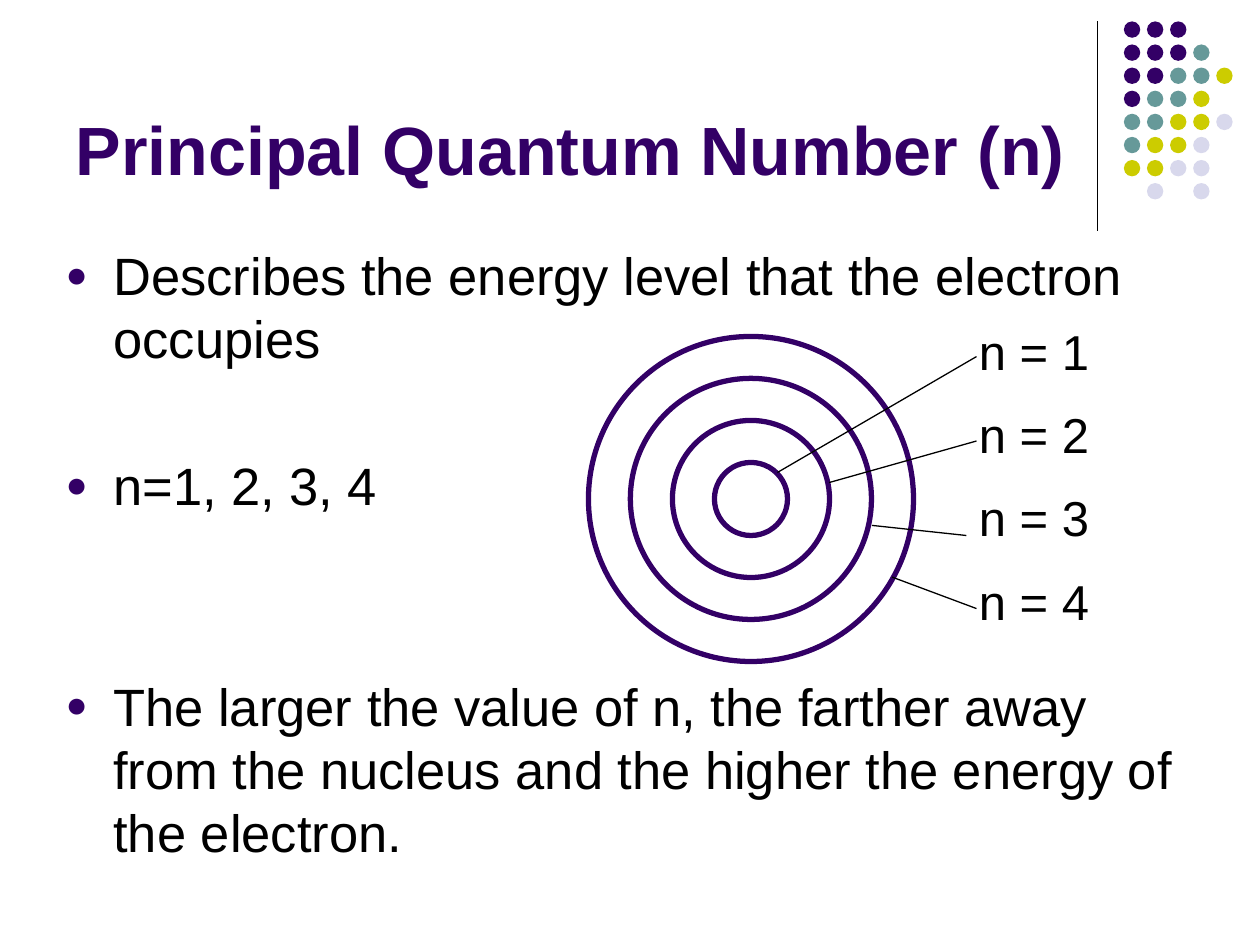
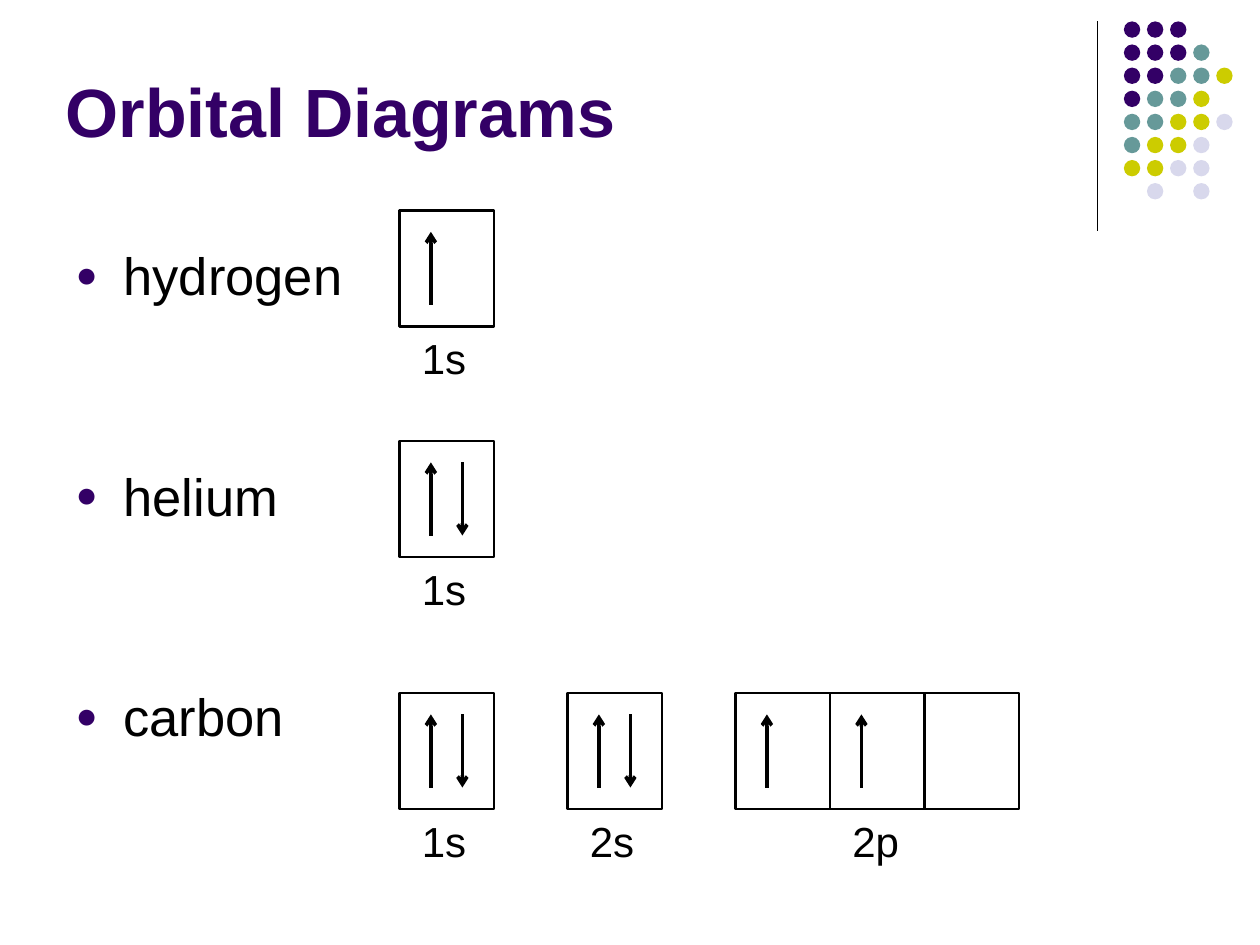
"""Builds two slides on quantum numbers and orbital diagrams."""
from dataclasses import dataclass

from lxml import etree
from pptx import Presentation
from pptx import util as u
from pptx.dml.color import RGBColor
from pptx.enum import shapes, text
from pptx.oxml import ns

ENERGY_TITLE = ("Principal Quantum Number (n)", (0.5, 0.13, 8.25, 1.42))
ENERGY_AREA = (0.42, 1.88, 9.08, 5.37)
ENERGY_POINTS = [
    ("Describes the energy level that the electron occupies", None),
    ("n=1, 2, 3, 4", 48),
    ("The larger the value of n, the farther away from the nucleus "
     "and the higher the energy of the electron.", 90),
]
LEVELS = ["n = 1", "n = 2", "n = 3", "n = 4"]
LEVEL_AREA = (7.67, 2.5, 1.25, 2.67)
LEVEL_LEADERS = [
    ((6.17, 3.75), (7.75, 2.83)),
    ((6.58, 3.83), (7.75, 3.5)),
    ((6.92, 4.17), (7.67, 4.25)),
    ((7.08, 4.58), (7.75, 4.83)),
]
NUCLEUS, INNER_RADIUS, RING_GAP = (5.96, 3.96), 0.29, 1 / 3

ORBITAL_TITLE = ("Orbital Diagrams", (0.42, 0.33, 8.25, 0.92))
ORBITAL_AREA = (0.5, 1.88, 2.58, 4.82)
ELEMENTS = [("hydrogen", None), ("helium", 90), ("carbon", 90)]
ORBITALS = [
    (1.67, [("1s", ["↑"])]),
    (3.5, [("1s", ["↑↓"])]),
    (5.5, [("1s", ["↑↓"]), ("2s", ["↑↓"]), ("2p", ["↑", "↑", ""])]),
]
ORBITAL_LEFT, ORBITAL_STEP = 3.17, 4 / 3
CELL_WIDTH, CELL_HEIGHT, SPIN_GAP = 0.75, 0.92, 0.25

DOT_ROWS = ["PPP", "PPPT", "PPTTY", "PTTY", "TTYYL", "TYYL", "YYLL", " L L"]
DOT_ORIGIN, DOT_STEP, DOT_SIZE = (8.92, 0.17), 0.55 / 3, 0.13


@dataclass(frozen=True)
class Theme:
    """Colours, font and type sizes of the deck."""
    font: str = "Arial"
    purple: str = "330066"
    teal: str = "669999"
    yellow: str = "CCCC00"
    lilac: str = "D8D8EC"
    black: str = "000000"
    title: int = 39
    body: int = 30
    level: int = 28
    orbital: int = 24


THEME = Theme()
DOT_COLOURS = {"P": THEME.purple, "T": THEME.teal, "Y": THEME.yellow, "L": THEME.lilac}


def rgb(colour):
    """Turn a hex string into a colour."""
    return RGBColor.from_string(colour)


def inches(values):
    """Turn numbers into lengths."""
    return [u.Inches(value) for value in values]


def style(para, size, colour=THEME.black, bold=False):
    """Set the font of a whole paragraph."""
    font = para.font
    font.name, font.size, font.bold = THEME.font, u.Pt(size), bold
    font.color.rgb = rgb(colour)


def place(box, area):
    """Move a placeholder to an area."""
    box.left, box.top, box.width, box.height = inches(area)


def add_outline(parent, kind, area, fill=None, line=None, width=1.5):
    """Add a preset shape with a plain fill or a plain line."""
    shape = parent.add_shape(kind, *inches(area))
    shape.shadow.inherit = False
    if fill:
        shape.fill.solid()
        shape.fill.fore_color.rgb = rgb(fill)
    else:
        shape.fill.background()
    if line:
        shape.line.color.rgb = rgb(line)
        shape.line.width = u.Pt(width)
    else:
        shape.line.fill.background()


def add_line(parent, start, end, width=0.75, arrow=False):
    """Add a straight black line, with an arrowhead at its end if asked."""
    line = parent.add_connector(shapes.MSO_CONNECTOR.STRAIGHT, *inches(start + end))
    line.line.color.rgb = rgb(THEME.black)
    line.line.width = u.Pt(width)
    properties = line.element.spPr
    if arrow:
        etree.SubElement(properties.find(ns.qn("a:ln")), ns.qn("a:tailEnd"), type="arrow")
    etree.SubElement(properties, ns.qn("a:effectLst"))


def add_label(slide, area, lines, size):
    """Add a text box with one paragraph for each line."""
    frame = slide.shapes.add_textbox(*inches(area)).text_frame
    frame.word_wrap = True
    frame.text = "\n".join(lines)
    for index, para in enumerate(frame.paragraphs):
        style(para, size)
        if index:
            para.space_before = u.Pt(size / 2)


def add_bullet(para):
    """Give a paragraph a hanging purple bullet."""
    properties = para._p.get_or_add_pPr()
    properties.set("marL", str(u.Inches(0.38)))
    properties.set("indent", str(u.Inches(-0.38)))
    colour = etree.SubElement(properties, ns.qn("a:buClr"))
    etree.SubElement(colour, ns.qn("a:srgbClr"), val=THEME.purple)
    etree.SubElement(properties, ns.qn("a:buSzPct"), val="70000")
    etree.SubElement(properties, ns.qn("a:buFont"), typeface=THEME.font)
    etree.SubElement(properties, ns.qn("a:buChar"), char="●")


def add_page(deck, title, area, points):
    """Add a slide with its title and bulleted list."""
    page = deck.slides.add_slide(deck.slide_layouts[1])
    heading, body = page.placeholders
    place(heading, title[1])
    heading.text_frame.text = title[0]
    heading.text_frame.vertical_anchor = text.MSO_ANCHOR.BOTTOM
    para = heading.text_frame.paragraphs[0]
    para.alignment = text.PP_ALIGN.LEFT
    style(para, THEME.title, THEME.purple, bold=True)

    place(body, area)
    frame = body.text_frame
    frame.auto_size = text.MSO_AUTO_SIZE.NONE
    frame.text = "\n".join(point for point, _ in points)
    for para, (_, gap) in zip(frame.paragraphs, points):
        add_bullet(para)
        style(para, THEME.body)
        if gap:
            para.space_before = u.Pt(gap)
    return page


def decorate_layout(page):
    """Put the rule and the dot pattern on the layout of a page."""
    layout = page.slide_layout
    for box in list(layout.placeholders)[2:]:
        layout.shapes.element.remove(box.element)
    group = page.shapes.add_group_shape()
    add_line(group.shapes, (8.71, 0.17), (8.71, 1.83))
    left, top = DOT_ORIGIN
    for row, dots in enumerate(DOT_ROWS):
        for column, dot in enumerate(dots):
            if dot in DOT_COLOURS:
                area = (left + column * DOT_STEP, top + row * DOT_STEP, DOT_SIZE, DOT_SIZE)
                add_outline(group.shapes, shapes.MSO_SHAPE.OVAL, area, fill=DOT_COLOURS[dot])
    layout.shapes.element.append(group.element)


def draw_levels(page):
    """Draw the energy levels as rings with labels and leaders."""
    x, y = NUCLEUS
    for index in range(len(LEVELS)):
        radius = INNER_RADIUS + index * RING_GAP
        area = (x - radius, y - radius, 2 * radius, 2 * radius)
        add_outline(page.shapes, shapes.MSO_SHAPE.OVAL, area, line=THEME.purple, width=3)
    add_label(page, LEVEL_AREA, LEVELS, THEME.level)
    for start, end in LEVEL_LEADERS:
        add_line(page.shapes, start, end)


def draw_cell(page, left, top, spins):
    """Draw one orbital box with its electron arrows."""
    area = (left, top, CELL_WIDTH, CELL_HEIGHT)
    add_outline(page.shapes, shapes.MSO_SHAPE.RECTANGLE, area, line=THEME.black)
    for index, spin in enumerate(spins, start=1):
        x = left + index * SPIN_GAP
        high, low = (x, top + 0.17), (x, top + 0.75)
        start, end = (low, high) if spin == "↑" else (high, low)
        add_line(page.shapes, start, end, width=2, arrow=True)


def draw_orbitals(page):
    """Draw the orbital boxes of every element."""
    for top, orbitals in ORBITALS:
        for index, (name, cells) in enumerate(orbitals):
            left = ORBITAL_LEFT + index * ORBITAL_STEP
            for column, spins in enumerate(cells):
                draw_cell(page, left + column * CELL_WIDTH, top, spins)
            label_left = left + len(cells) // 2 * CELL_WIDTH + 0.08
            area = (label_left, top + CELL_HEIGHT, CELL_WIDTH, 0.5)
            add_label(page, area, [name], THEME.orbital)


def main():
    """Build and save the deck."""
    deck = Presentation()
    deck.slide_width, deck.slide_height = inches((10, 7.5))
    energy = add_page(deck, ENERGY_TITLE, ENERGY_AREA, ENERGY_POINTS)
    decorate_layout(energy)
    draw_levels(energy)
    draw_orbitals(add_page(deck, ORBITAL_TITLE, ORBITAL_AREA, ELEMENTS))
    deck.save("out.pptx")


if __name__ == "__main__":
    main()
